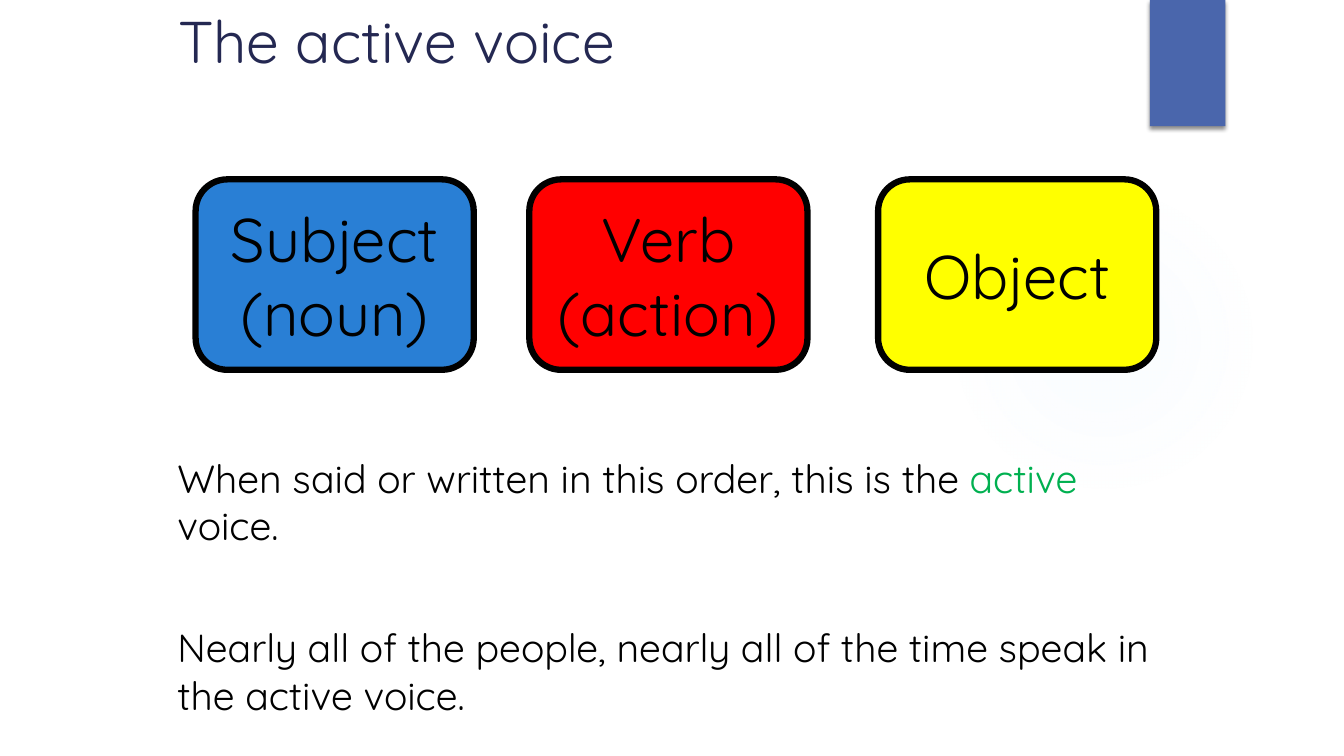
from pptx import Presentation
from pptx.dml.color import RGBColor
from pptx.enum.shapes import MSO_SHAPE
from pptx.enum.text import MSO_ANCHOR, PP_ALIGN
from pptx.oxml import parse_xml
from pptx.oxml.ns import nsdecls, qn
from pptx.util import Cm, Pt

RECTANGLE = MSO_SHAPE.RECTANGLE
ROUNDED = MSO_SHAPE.ROUNDED_RECTANGLE
ELLIPSE = MSO_SHAPE.OVAL
TOP, MIDDLE = MSO_ANCHOR.TOP, MSO_ANCHOR.MIDDLE
LEFT, CENTER = PP_ALIGN.LEFT, PP_ALIGN.CENTER

FONT = "Quicksand"
NAVY, INDIGO, GLOW = "242852", "4A66AC", "CDE0FB"
BLUE, RED, YELLOW = "297FD5", "FF0000", "FFFF00"
BLACK, GREEN = "000000", "00B050"


def color(hex_value):
    return RGBColor.from_string(hex_value)


def add_runs(paragraph, runs, size, align=LEFT):
    """Fill a paragraph with (text, colour) runs."""
    paragraph.alignment = align
    for text, hex_value in runs:
        run = paragraph.add_run()
        run.text = text
        for name, value in {"name": FONT, "size": Pt(size)}.items():
            setattr(run.font, name, value)
        run.font.color.rgb = color(hex_value)


def add_plain_shape(slide, kind, box, fill=None):
    """Add a shape with no outline and no shadow."""
    shape = slide.shapes.add_shape(kind, *map(Cm, box))
    shape.shadow.inherit = False
    shape.line.fill.background()
    if fill:
        shape.fill.solid()
        shape.fill.fore_color.rgb = color(fill)
    return shape


def add_glow(slide, box):
    glow = add_plain_shape(slide, ELLIPSE, box)
    stops = "".join(
        f'<a:gs pos="{position * 1000}"><a:srgbClr val="{GLOW}">'
        f'<a:alpha val="{opacity * 1000}"/></a:srgbClr></a:gs>'
        for position, opacity in ((0, 7), (36, 6), (69, 0)))
    gradient = parse_xml(
        f'<a:gradFill {nsdecls("a")}><a:gsLst>{stops}</a:gsLst>'
        '<a:path path="circle"><a:fillToRect l="50000" t="50000" r="50000" b="50000"/>'
        '</a:path></a:gradFill>')
    glow.element.spPr.find(qn("a:prstGeom")).addnext(gradient)


def add_ribbon(slide, box):
    ribbon = add_plain_shape(slide, RECTANGLE, box, INDIGO)
    ribbon.element.spPr.find(qn("a:effectLst")).append(parse_xml(
        f'<a:outerShdw {nsdecls("a")} blurRad="{Pt(3)}" dist="{Pt(2)}" dir="5400000" '
        f'rotWithShape="0"><a:srgbClr val="{BLACK}"><a:alpha val="45000"/></a:srgbClr>'
        '</a:outerShdw>'))


def add_text(slide, box, paragraphs, size, gap=0):
    frame = slide.shapes.add_textbox(*map(Cm, box)).text_frame
    for name, value in {"word_wrap": True, "vertical_anchor": TOP}.items():
        setattr(frame, name, value)
    for index, runs in enumerate(paragraphs):
        paragraph = frame.add_paragraph() if index else frame.paragraphs[0]
        if index:
            paragraph.space_before = Pt(gap)
        add_runs(paragraph, runs, size)


def add_word_cards(slide, box, cards, card_width):
    """Place cards, each given as (offset, label, fill), in a row."""
    left, top, _, height = box
    for offset, label, fill in cards:
        card = add_plain_shape(slide, ROUNDED, (left + offset, top, card_width, height), fill)
        card.line.color.rgb = color(BLACK)
        card.line.width = Pt(4.5)
        frame = card.text_frame
        for name, value in {"word_wrap": True, "vertical_anchor": MIDDLE}.items():
            setattr(frame, name, value)
        add_runs(frame.paragraphs[0], [(label, BLACK)], 44, CENTER)


def build_voice_slide(slide):
    add_glow(slide, (23.9, 4.65, 7.82, 7.82))
    add_ribbon(slide, (28.98, 0, 1.9, 3.18))
    add_text(slide, (4.24, 0, 25.4, 3.18), [[("The active voice", NAVY)]], 42)
    explanation = [
        [("When said or written in this order, this is the ", BLACK),
         ("active", GREEN), (" voice.", BLACK)],
        [("Nearly all of the people, nearly all of the time speak in the active voice.",
          BLACK)],
    ]
    add_text(slide, (4.22, 11.33, 25.43, 7.72), explanation, 28, gap=53.6)
    cards = [(0, "Subject (noun)", BLUE), (8.41, "Verb (action)", RED),
             (17.2, "Object", YELLOW)]
    add_word_cards(slide, (4.93, 4.52, 24.21, 4.8), cards, 7.01)


def main():
    presentation = Presentation()
    presentation.slide_width, presentation.slide_height = Cm(33.87), Cm(19.05)
    build_voice_slide(presentation.slides.add_slide(presentation.slide_layouts[6]))
    presentation.save("out.pptx")


if __name__ == "__main__":
    main()
